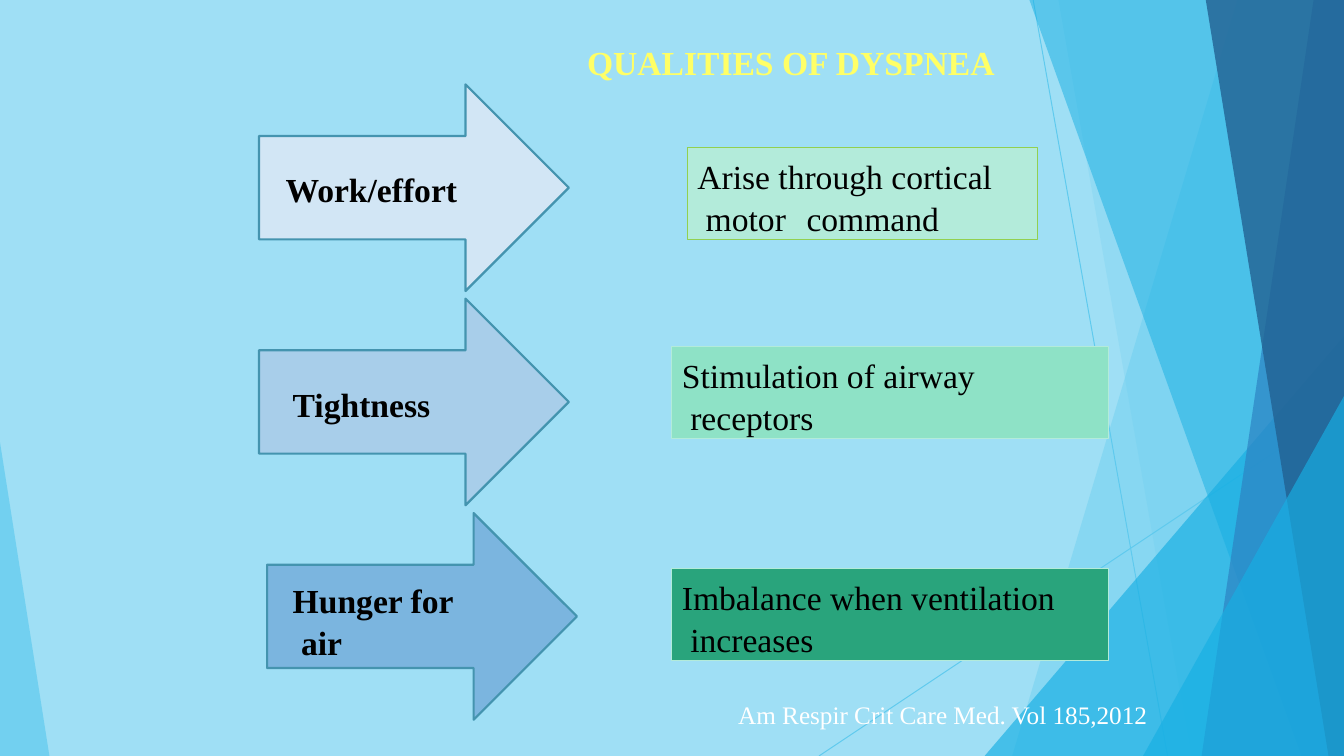
from lxml.etree import SubElement
from pptx import Presentation
from pptx.dml.color import RGBColor
from pptx.enum.shapes import MSO_CONNECTOR, MSO_SHAPE
from pptx.enum.text import MSO_ANCHOR, MSO_AUTO_SIZE, PP_ALIGN
from pptx.oxml.ns import qn
from pptx.util import Pt

WIDTH, HEIGHT = 960, 540


class Theme:
    font = "Times New Roman"
    text_size, citation_size = 24, 18
    line_spacing = 1.04
    hanging = 6
    background = "9FDFF5"
    sky, azure, blue, navy = "5FCAEE", "17AFE3", "2D83C3", "226192"
    title, text, citation = "FFFF66", "000000", "FFFFFF"
    arrow_line = "4494AF"
    arrow_fills = ("D2E6F5", "A8CEEA", "7BB5DF")
    cause_fills = ("B3EBDA", "8EE2C6", "29A47C")
    cause_lines = ("92D050", "B3EBDA", "B3EBDA")


class SlideBuilder:
    def __init__(self, slide, theme):
        self.slide, self.theme = slide, theme
        fill = slide.background.fill
        fill.solid()
        fill.fore_color.rgb = RGBColor.from_string(theme.background)

    def paint(self, shape, fill, line=None, line_width=0.72):
        shape.shadow.inherit = False
        shape.fill.solid()
        shape.fill.fore_color.rgb = RGBColor.from_string(fill)
        if line:
            shape.line.color.rgb = RGBColor.from_string(line)
            shape.line.width = Pt(line_width)
        else:
            shape.line.fill.background()

    def facet(self, points, color, opacity):
        corners = [(Pt(x), Pt(y)) for x, y in points]
        builder = self.slide.shapes.build_freeform(*corners[0], scale=1.0)
        builder.add_line_segments(corners[1:], close=True)
        shape = builder.convert_to_shape()
        self.paint(shape, color)
        color_element = shape.element.spPr.find(".//" + qn("a:srgbClr"))
        SubElement(color_element, qn("a:alpha"), val=str(opacity * 1000))

    def line(self, start, end, color):
        connector = self.slide.shapes.add_connector(
            MSO_CONNECTOR.STRAIGHT, *(Pt(value) for value in (*start, *end)))
        connector.line.color.rgb = RGBColor.from_string(color)
        connector.line.width = Pt(0.72)
        SubElement(connector.element.spPr, qn("a:effectLst"))

    def set_text(self, shape, text, color, size, bold=False, inset=(1, 1), tab=None):
        frame = shape.text_frame
        frame.word_wrap = True
        frame.auto_size = MSO_AUTO_SIZE.NONE
        frame.vertical_anchor = MSO_ANCHOR.TOP
        frame.margin_left, frame.margin_top = Pt(inset[0]), Pt(inset[1])
        frame.margin_right = frame.margin_bottom = 0
        frame.text = text
        paragraph = frame.paragraphs[0]
        paragraph.alignment = PP_ALIGN.LEFT
        paragraph.line_spacing = self.theme.line_spacing
        # Hanging indent for the second line, and an optional tab stop
        properties = paragraph._p.get_or_add_pPr()
        properties.set("marL", str(Pt(self.theme.hanging)))
        properties.set("indent", str(-Pt(self.theme.hanging)))
        if tab:
            tabs = SubElement(properties, qn("a:tabLst"))
            SubElement(tabs, qn("a:tab"), pos=str(Pt(tab)), algn="l")
        for run in paragraph.runs:
            run.font.name = self.theme.font
            run.font.size = Pt(size)
            run.font.bold = bold
            run.font.color.rgb = RGBColor.from_string(color)

    def title(self, text, left, top, width, height):
        shape = self.slide.shapes.title
        shape.left, shape.top = Pt(left), Pt(top)
        shape.width, shape.height = Pt(width), Pt(height)
        self.set_text(shape, text, self.theme.title, self.theme.text_size, bold=True)

    def label(self, text, left, top, width, height, color, size, bold=False):
        shape = self.slide.shapes.add_textbox(Pt(left), Pt(top), Pt(width), Pt(height))
        self.set_text(shape, text, color, size, bold)

    def arrow(self, left, top, fill):
        shape = self.slide.shapes.add_shape(
            MSO_SHAPE.RIGHT_ARROW, Pt(left), Pt(top), Pt(221.3), Pt(147.6))
        self.paint(shape, fill, self.theme.arrow_line, 1.56)

    def cause(self, text, left, top, width, fill, line, tab=None):
        shape = self.slide.shapes.add_shape(
            MSO_SHAPE.RECTANGLE, Pt(left), Pt(top), Pt(width), Pt(65.5))
        self.paint(shape, fill, line)
        self.set_text(shape, text, self.theme.text, self.theme.text_size,
                      inset=(7.2, 4.7), tab=tab)


def main():
    presentation = Presentation()
    presentation.slide_width, presentation.slide_height = Pt(WIDTH), Pt(HEIGHT)
    theme = Theme()
    slide = presentation.slides.add_slide(presentation.slide_layouts[5])
    builder = SlideBuilder(slide, theme)

    # Thin lines behind the facets
    builder.line((738, 0), (834, HEIGHT), theme.sky)
    builder.line((WIDTH, 290), (585, HEIGHT), theme.sky)

    # Facets on the right: upper edge, lower left corner, colour, opacity
    top_right, bottom_right = (WIDTH, 0), (WIDTH, HEIGHT)
    for upper, lower_x, color, opacity in (
        ((884, 0), 723, theme.sky, 36),
        ((756, 0), 851, theme.sky, 20),
        ((WIDTH, 240), 703.3, theme.azure, 66),
        ((735.3, 0), 929.5, theme.azure, 50),
        ((938.3, 0), 858.3, theme.blue, 70),
        ((861.3, 0), 949, theme.navy, 80),
        ((WIDTH, 283), 816.5, theme.azure, 66),
    ):
        corners = [upper, (lower_x, HEIGHT), bottom_right]
        if upper[0] < WIDTH:
            corners.append(top_right)
        builder.facet(corners, color, opacity)

    # Facet on the left
    builder.facet([(0, 316), (0, HEIGHT), (35.3, HEIGHT)], theme.sky, 70)

    builder.title("QUALITIES OF DYSPNEA", 418.3, 28.1, 300, 31)

    # Qualities: arrow position, label and label box
    qualities = (
        ((185, 60.3), "Work/effort", (203, 118.8, 130, 31)),
        ((185, 213.3), "Tightness", (208.1, 272.2, 110, 31)),
        ((190.8, 366.5), "Hunger for\vair", (208.1, 411.8, 120, 60)),
    )
    for (position, text, box), fill in zip(qualities, theme.arrow_fills):
        builder.arrow(*position, fill)
        builder.label(text, *box, theme.text, theme.text_size, bold=True)

    # Causes: text, left, top, width, tab stop
    causes = (
        ("Arise through cortical\vmotor\tcommand", 491, 105.5, 250, 71),
        ("Stimulation of airway\vreceptors", 480, 247.5, 312, None),
        ("Imbalance when ventilation\vincreases", 480, 406.3, 312, None),
    )
    for (text, left, top, width, tab), fill, line in zip(
            causes, theme.cause_fills, theme.cause_lines):
        builder.cause(text, left, top, width, fill, line, tab)

    # Citation
    builder.label("Am Respir Crit Care Med. Vol 185,2012", 526.3, 497.5, 310, 24,
                  theme.citation, theme.citation_size)

    presentation.save("out.pptx")


if __name__ == "__main__":
    main()
